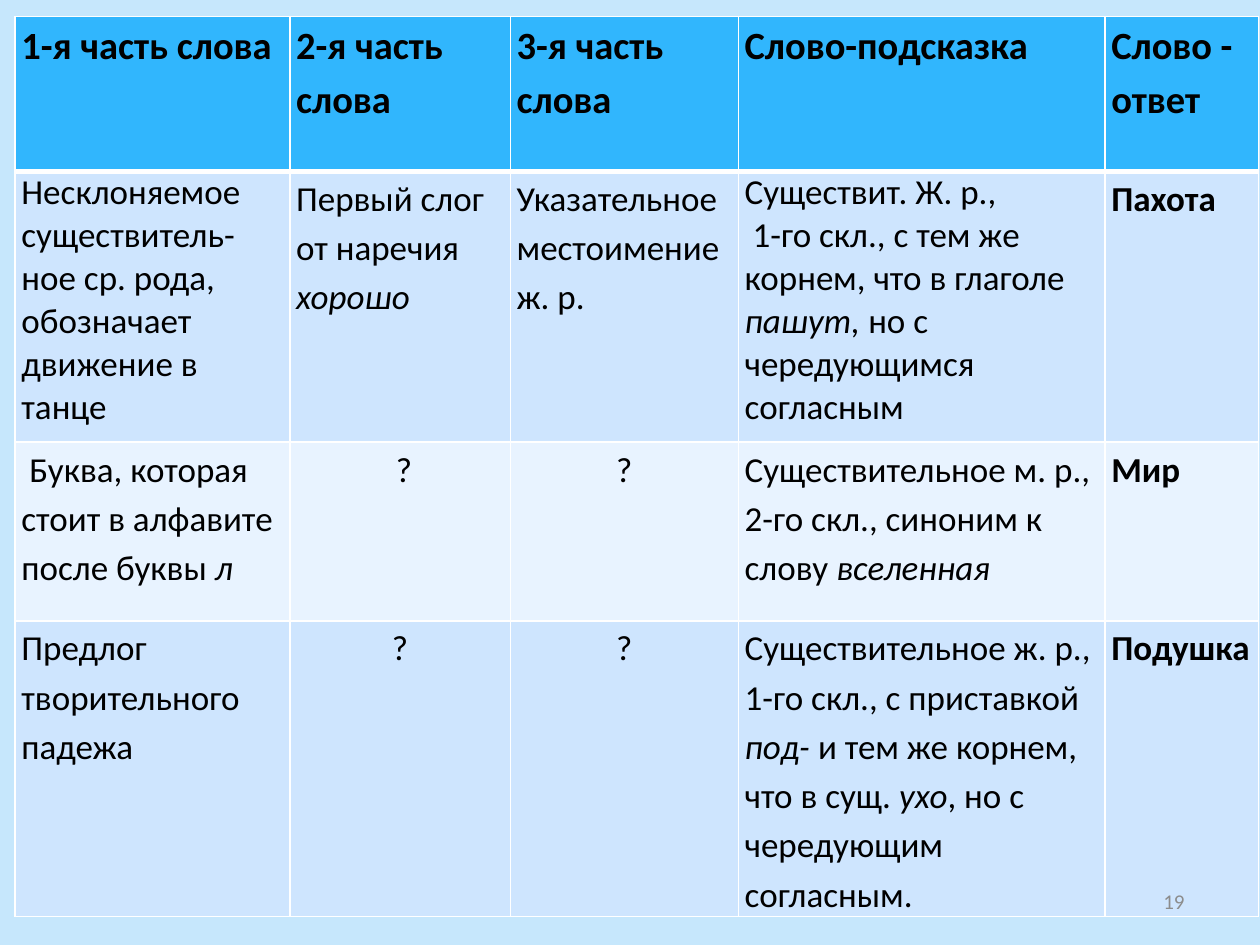
from lxml import etree
from pptx import Presentation, util as u
from pptx.dml.color import RGBColor
from pptx.enum import text
from pptx.oxml.ns import qn

COLORS = {"background": "C6E7FC", "header": "31B6FD", "odd": "CEE5FE",
          "even": "E8F3FF", "border": "FFFFFF", "text": "000000", "number": "8C8C8C"}
FONT = "Calibri"

# Asterisks enclose italic words; a line break starts a new paragraph.
HEADERS = ["1-я часть слова", "2-я часть слова", "3-я часть слова",
           "Слово-подсказка", "Слово - ответ"]
RIDDLES = [
    ["Несклоняемое существитель-\nное ср. рода, обозначает движение в танце",
     "Первый слог от наречия *хорошо*",
     "Указательное местоимение ж. р.",
     "Существит. Ж. р.,\n 1-го скл., с тем же корнем, что в глаголе *пашут, *"
     "но с чередующимся согласным",
     "Пахота"],
    [" Буква, которая стоит в алфавите после буквы *л*",
     " ?",
     "?",
     "Существительное м. р., 2-го скл., синоним к слову *вселенная*",
     "Мир"],
    ["Предлог творительного падежа",
     "?",
     "?",
     "Существительное ж. р., 1-го скл., с приставкой *под- *и тем же корнем, "
     "что в сущ. *ухо*, но с чередующим согласным.",
     "Подушка"],
]
COLUMN_WIDTHS = [2.18, 1.75, 1.81, 2.91, 1.22]
ROW_HEIGHTS = [1.23, 2.15, 1.42, 1.91]
ANSWER_COLUMN = len(HEADERS) - 1


def rgb(name):
    return RGBColor.from_string(COLORS[name])


def add_run(paragraph, words, size, color="text", bold=False, italic=False):
    run = paragraph.add_run()
    run.text = words
    run.font.name, run.font.size = FONT, u.Pt(size)
    run.font.bold, run.font.italic = bold, italic
    run.font.color.rgb = rgb(color)


def set_borders(cell, **widths):
    """Draw the cell's sides; widths are in points, keyed L, R, T, B."""
    properties = cell._tc.get_or_add_tcPr()
    for side, width in widths.items():
        line = etree.SubElement(properties, qn(f"a:ln{side}"), w=str(u.Pt(width)))
        fill = etree.SubElement(line, qn("a:solidFill"))
        etree.SubElement(fill, qn("a:srgbClr"), val=COLORS["border"])


def fill_cell(cell, content, row, column):
    is_header = row == 0
    set_borders(cell, L=1, R=1, T=3 if row == 1 else 1, B=3 if is_header else 1)
    cell.fill.solid()
    cell.fill.fore_color.rgb = rgb("header" if is_header else "odd" if row % 2 else "even")
    cell.margin_left = cell.margin_right = u.Inches(0.05)
    cell.margin_top = cell.margin_bottom = 0

    lines = content.split("\n")
    for index, line in enumerate(lines):
        paragraph = cell.text_frame.paragraphs[0] if index == 0 else cell.text_frame.add_paragraph()
        if len(lines) == 1:
            paragraph.line_spacing = 1.15
        if content.strip() == "?":
            paragraph.alignment = text.PP_ALIGN.CENTER
        for part, words in enumerate(line.split("*")):
            if words:
                add_run(paragraph, words, 22 if is_header else 20,
                        bold=is_header or column == ANSWER_COLUMN, italic=part % 2 == 1)


def add_riddle_table(slide):
    rows = [HEADERS] + RIDDLES
    table = slide.shapes.add_table(
        len(rows), len(HEADERS), u.Inches(0.12), u.Inches(0.13),
        u.Inches(sum(COLUMN_WIDTHS)), u.Inches(sum(ROW_HEIGHTS))).table
    for column, width in zip(table.columns, COLUMN_WIDTHS):
        column.width = u.Inches(width)
    for row, height in zip(table.rows, ROW_HEIGHTS):
        row.height = u.Inches(height)
    for r, contents in enumerate(rows):
        for c, content in enumerate(contents):
            fill_cell(table.cell(r, c), content, r, c)


def add_slide_number(slide, number):
    frame = slide.shapes.add_textbox(
        u.Inches(7.17), u.Inches(6.95), u.Inches(2.33), u.Inches(0.4)).text_frame
    frame.word_wrap = True
    frame.vertical_anchor = text.MSO_ANCHOR.MIDDLE
    frame.paragraphs[0].alignment = text.PP_ALIGN.RIGHT
    add_run(frame.paragraphs[0], number, 12, "number")


def main():
    deck = Presentation()
    deck.slide_width, deck.slide_height = u.Inches(10), u.Inches(7.5)
    slide = deck.slides.add_slide(deck.slide_layouts[6])
    slide.background.fill.solid()
    slide.background.fill.fore_color.rgb = rgb("background")
    add_riddle_table(slide)
    add_slide_number(slide, "19")
    deck.save("out.pptx")


if __name__ == "__main__":
    main()
